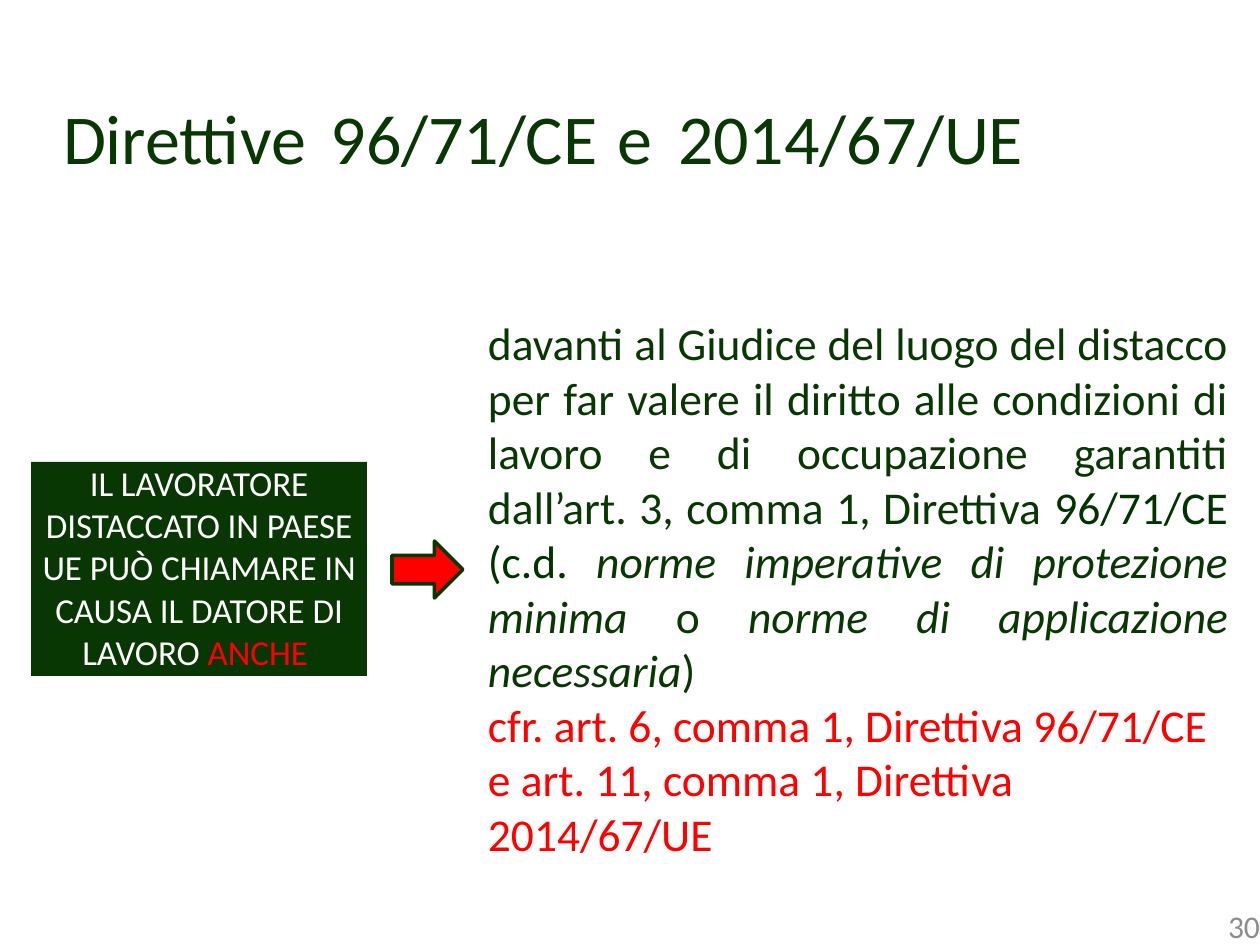
from dataclasses import dataclass

from pptx import Presentation
from pptx.dml.color import RGBColor
from pptx.enum.shapes import MSO_SHAPE
from pptx.enum.text import MSO_ANCHOR, PP_ALIGN
from pptx.util import Pt

EMU_PER_PX = 914400 / 126


@dataclass(frozen=True)
class Theme:
    font: str = "Calibri"
    green: str = "093703"
    dark_green: str = "003300"
    red: str = "FF0000"
    white: str = "FFFFFF"
    grey: str = "8C8C8C"
    title_size: int = 40
    body_size: int = 26
    label_size: int = 20
    number_size: int = 18
    # tracking in hundredths of a point
    title_tracking: int = -7
    body_tracking: int = -3
    label_tracking: int = -7
    outline: int = 2


THEME = Theme()

# Title words, each with the tracking of the space that follows it.
TITLE_WORDS = [("Direttive", 330), ("96/71/CE", 100), ("e", 450), ("2014/67/UE", 0)]

# Each paragraph is (alignment, runs); each run is (text, colour, italic),
# with its own tracking as an optional fourth item.
TITLE = [(PP_ALIGN.JUSTIFY, [
    run
    for word, gap in TITLE_WORDS
    for run in ((word, THEME.green, False), (" ", THEME.green, False, gap))
])]
BODY = [
    (PP_ALIGN.JUSTIFY, [
        ("davanti al Giudice del luogo del distacco per far valere il diritto alle "
         "condizioni di lavoro e di occupazione garantiti dall’art. 3, comma 1, "
         "Direttiva ", THEME.green, False),
        ("96/71/CE (c.d. ", THEME.dark_green, False),
        ("norme imperative di protezione minima ", THEME.green, True),
        ("o ", THEME.green, False),
        ("norme di applicazione necessaria", THEME.green, True),
        (")", THEME.green, False),
    ]),
    (PP_ALIGN.LEFT, [
        ("cfr. art. 6, comma 1, Direttiva 96/71/CE e art. 11, comma 1, "
         "Direttiva 2014/67/UE", THEME.red, False),
    ]),
]
LABEL = [(PP_ALIGN.CENTER, [
    ("IL LAVORATORE DISTACCATO IN PAESE UE PUÒ CHIAMARE IN CAUSA IL DATORE DI LAVORO ",
     THEME.white, False),
    ("ANCHE ", THEME.red, False),
])]
NUMBER = [(PP_ALIGN.RIGHT, [("30", THEME.grey, False)])]

# left, top, width, height in px
PLACES = {
    "title": (63, 95, 960, 84),
    "body": (488, 315, 740, 552),
    "label": (31, 462, 336, 214),
    "arrow": (399, 534, 57, 71),
    "number": (970, 907, 290, 38),
}


def px(length):
    return round(length * EMU_PER_PX)


def place(name):
    return [px(length) for length in PLACES[name]]


def paint(fill, colour):
    fill.solid()
    fill.fore_color.rgb = RGBColor.from_string(colour)


def write(shape, paragraphs, size, tracking=0):
    frame = shape.text_frame
    frame.word_wrap = True
    frame.vertical_anchor = MSO_ANCHOR.TOP
    frame.margin_left = frame.margin_top = frame.margin_right = frame.margin_bottom = 0
    for index, (alignment, runs) in enumerate(paragraphs):
        para = frame.add_paragraph() if index else frame.paragraphs[0]
        para.alignment = alignment
        para.space_before = Pt(0)
        for text, colour, italic, *own_tracking in runs:
            span = para.add_run()
            span.text = text
            span.font.name = THEME.font
            span.font.size = Pt(size)
            span.font.italic = italic
            span.font.color.rgb = RGBColor.from_string(colour)
            span.font._element.set("spc", str((own_tracking or [tracking])[0]))


def add_filled(page, kind, name, colour):
    shape = page.shapes.add_shape(kind, *place(name))
    shape.shadow.inherit = False
    paint(shape.fill, colour)
    return shape


def main():
    deck = Presentation()
    deck.slide_width, deck.slide_height = px(1260), px(945)
    page = deck.slides.add_slide(deck.slide_layouts[5])
    paint(page.background.fill, THEME.white)

    title = page.shapes.title
    title.left, title.top, title.width, title.height = place("title")
    write(title, TITLE, THEME.title_size, THEME.title_tracking)

    body = page.shapes.add_textbox(*place("body"))
    write(body, BODY, THEME.body_size, THEME.body_tracking)

    label = add_filled(page, MSO_SHAPE.RECTANGLE, "label", THEME.green)
    label.line.fill.background()
    write(label, LABEL, THEME.label_size, THEME.label_tracking)

    arrow = add_filled(page, MSO_SHAPE.DOWN_ARROW, "arrow", THEME.red)
    arrow.rotation = 270
    arrow.line.color.rgb = RGBColor.from_string(THEME.green)
    arrow.line.width = Pt(THEME.outline)

    number = page.shapes.add_textbox(*place("number"))
    write(number, NUMBER, THEME.number_size)
    deck.save("out.pptx")


if __name__ == "__main__":
    main()
